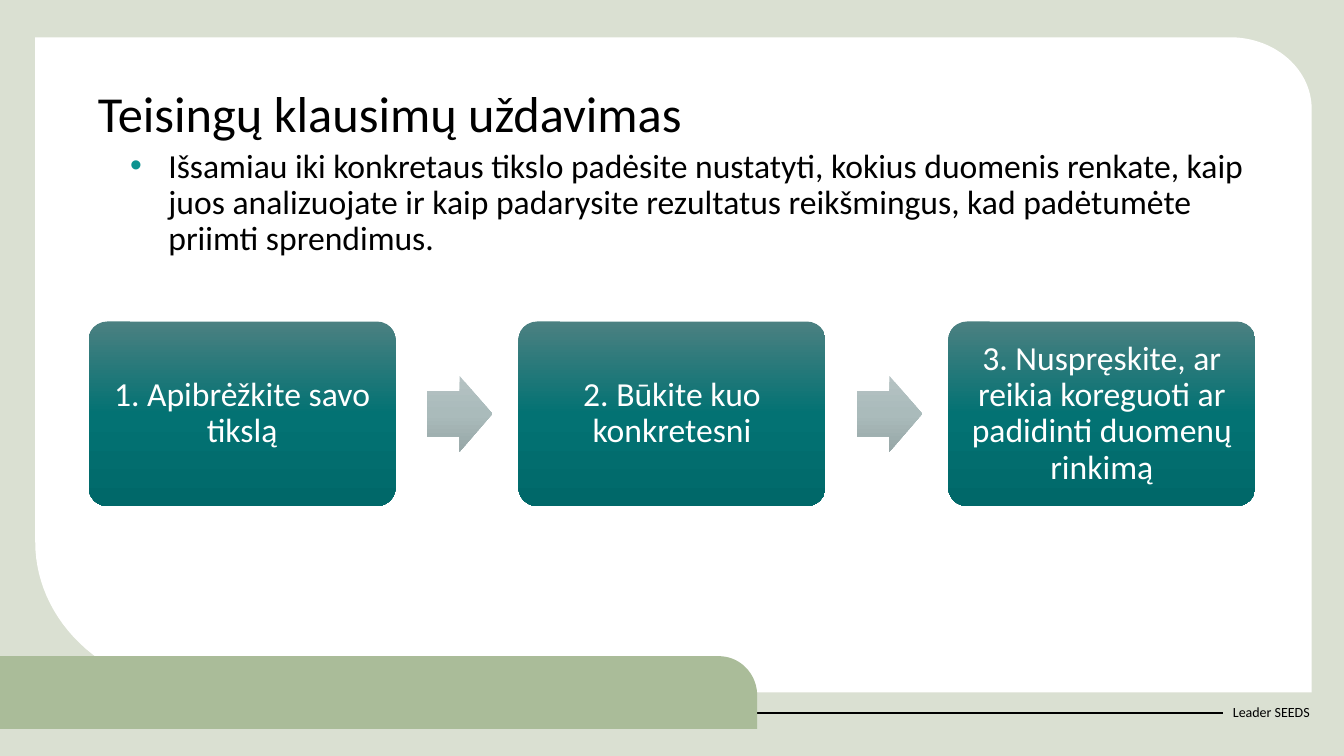
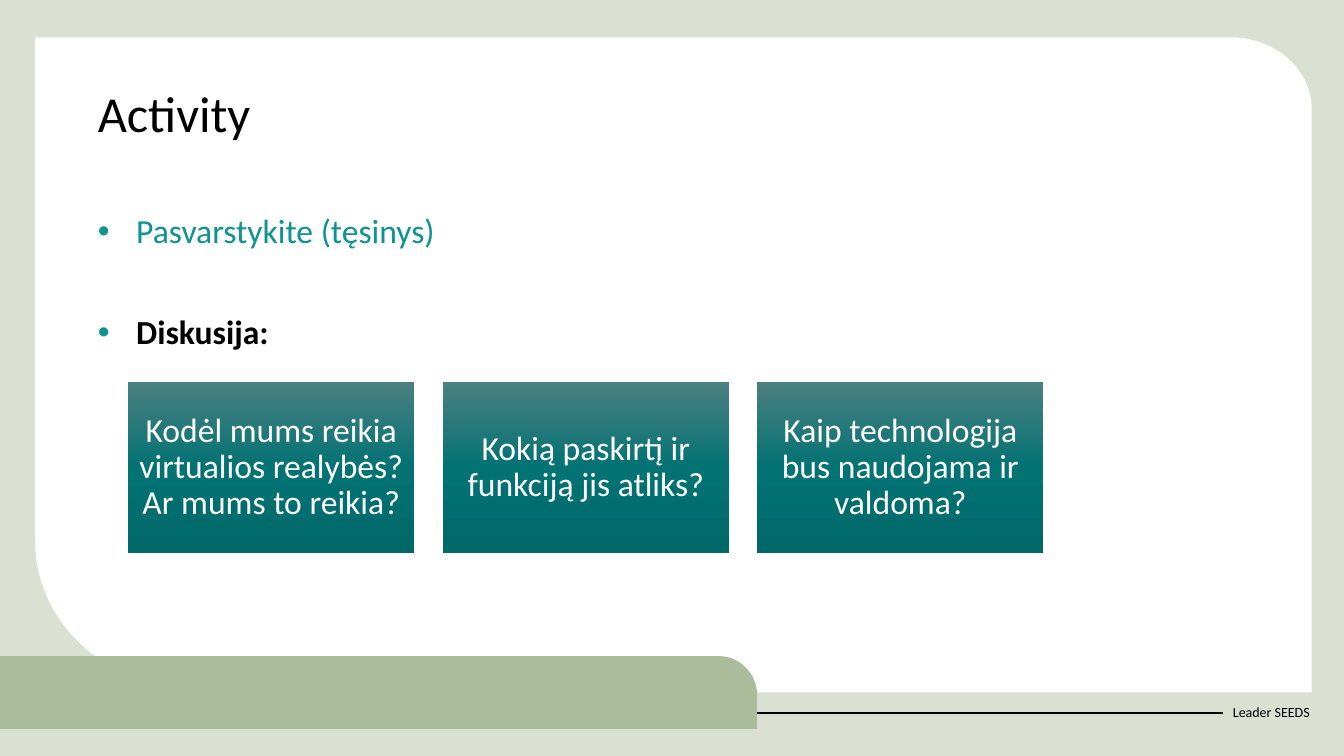
import math
from dataclasses import dataclass

import pptx
import pptx.dml.color
import pptx.enum.shapes
import pptx.enum.text
import pptx.oxml.ns
import pptx.util
from lxml import etree

Inches = pptx.util.Inches
Pt = pptx.util.Pt
RGB = pptx.dml.color.RGBColor.from_string
Shape = pptx.enum.shapes.MSO_SHAPE
Align = pptx.enum.text.PP_ALIGN
Anchor = pptx.enum.text.MSO_ANCHOR
qn = pptx.oxml.ns.qn


@dataclass(frozen=True)
class Theme:
    font: str = "Calibri"
    page: str = "DAE0D2"
    panel: str = "FFFFFF"
    band: str = "AABC99"
    text: str = "000000"
    accent: str = "0D9390"
    on_box: str = "FFFFFF"
    box_gradient: tuple = ("4B8081", "037273", "006869")
    arrow_gradient: tuple = ("B5C2C3", "AABBBB", "97A7A7")
    title_size: int = 36
    body_size: int = 24
    footer_size: int = 10
    line_spacing: float = 0.9


THEME = Theme()


def add_bullet(p, color):
    pPr = p._p.get_or_add_pPr()
    pPr.set("marL", str(Inches(0.38)))
    pPr.set("indent", str(-Inches(0.38)))
    clr = etree.SubElement(pPr, qn("a:buClr"))
    etree.SubElement(clr, qn("a:srgbClr"), val=color)
    etree.SubElement(pPr, qn("a:buFont"), typeface="Arial")
    etree.SubElement(pPr, qn("a:buChar"), char="•")


def write(tf, text, size=THEME.body_size, color=THEME.text, bold=False,
          align=Align.LEFT, before=0, bullet=False):
    """Fill the first paragraph if the frame is empty, otherwise add one."""
    p = tf.add_paragraph() if tf.text else tf.paragraphs[0]
    if bullet:
        add_bullet(p, THEME.accent)
    p.alignment = align
    p.line_spacing = THEME.line_spacing
    p.space_before = Pt(before)
    r = p.add_run()
    r.text = text
    r.font.name = THEME.font
    r.font.size = Pt(size)
    r.font.bold = bold
    r.font.color.rgb = RGB(color)


def place(sp, box):
    sp.left, sp.top, sp.width, sp.height = (Inches(v) for v in box)


def set_frame(tf, anchor, margin=None):
    tf.word_wrap = True
    tf.auto_size = pptx.enum.text.MSO_AUTO_SIZE.NONE
    tf.vertical_anchor = anchor
    if margin is not None:
        tf.margin_left = tf.margin_right = Inches(margin)
        tf.margin_top = tf.margin_bottom = Inches(margin)


def fill_gradient(sp, colors):
    """Spread the colours evenly from top to bottom."""
    sp.fill.gradient()
    sp.fill.gradient_angle = 270
    stops = next(sp.element.spPr.iter(qn("a:gsLst")))
    for gs in list(stops):
        stops.remove(gs)
    for i, color in enumerate(colors):
        pos = round(100000 * i / (len(colors) - 1))
        gs = etree.SubElement(stops, qn("a:gs"), pos=str(pos))
        etree.SubElement(gs, qn("a:srgbClr"), val=color)


def add_gradient_shape(slide, kind, box, colors, adjustments=()):
    sp = slide.shapes.add_shape(kind, *(Inches(v) for v in box))
    for i, value in enumerate(adjustments):
        sp.adjustments[i] = value
    sp.shadow.inherit = False
    sp.line.fill.background()
    fill_gradient(sp, colors)
    return sp


def add_rounded_panel(slide, box, color, top_right=(0, 0), bottom_left=(0, 0)):
    """Draw a rectangle with two elliptical corners, given as (rx, ry)."""
    x, y, w, h = box

    def arc(cx, cy, radii, start):
        angles = [math.radians(start + 3 * i) for i in range(31)]
        return [(cx + radii[0] * math.cos(a), cy + radii[1] * math.sin(a))
                for a in angles]

    points = [(x, y)]
    points += arc(x + w - top_right[0], y + top_right[1], top_right, -90)
    points.append((x + w, y + h))
    points += arc(x + bottom_left[0], y + h - bottom_left[1], bottom_left, 90)
    points = [(Inches(px), Inches(py)) for px, py in points]
    fb = slide.shapes.build_freeform(*points[0])
    fb.add_line_segments(points[1:])
    sp = fb.convert_to_shape()
    sp.shadow.inherit = False
    sp.fill.solid()
    sp.fill.fore_color.rgb = RGB(color)
    sp.line.fill.background()
    return sp


def add_footer(slide, box):
    """Add the footer label and the rule that runs into its left side."""
    label = slide.shapes.add_textbox(*(Inches(v) for v in box))
    set_frame(label.text_frame, Anchor.MIDDLE)
    write(label.text_frame, "Leader SEEDS", size=THEME.footer_size)
    y = Inches(box[1] + box[3] / 2)
    rule = slide.shapes.add_connector(
        pptx.enum.shapes.MSO_CONNECTOR.STRAIGHT, 0, y, Inches(box[0]), y)
    rule.end_connect(label, 1)
    rule.line.color.rgb = RGB(THEME.text)
    rule.line.width = Pt(1.5)
    etree.SubElement(rule.element.spPr, qn("a:effectLst"))
    return [label, rule]


def decorate_layout(layout, slide):
    """Build the shared parts on a slide, then move them behind the layout."""
    for ph in list(layout.placeholders):
        if ph.placeholder_format.idx >= 10:
            layout.shapes.element.remove(ph.element)
    layout.background.fill.solid()
    layout.background.fill.fore_color.rgb = RGB(THEME.page)
    parts = [add_rounded_panel(slide, (0.35, 0.37, 12.66, 6.5), THEME.panel,
                               top_right=(0.81, 0.71),
                               bottom_left=(1.7, 1.49))]
    parts += add_footer(slide, (12.13, 6.87, 1.01, 0.4))
    parts.append(add_rounded_panel(slide, (0, 6.51, 7.51, 0.72), THEME.band,
                                   top_right=(0.38, 0.39)))
    for i, sp in enumerate(parts):
        layout.shapes.element.insert(2 + i, sp.element)
    place(layout.placeholders[0], (0.87, 0.83, 11.59, 0.88))
    place(layout.placeholders[1], (0.87, 2.08, 11.59, 4.37))


def fill_title(slide, text):
    tf = slide.shapes.title.text_frame
    set_frame(tf, Anchor.TOP)
    write(tf, text, size=THEME.title_size)


def body_frame(slide, box):
    body = slide.placeholders[1]
    place(body, box)
    set_frame(body.text_frame, Anchor.TOP)
    return body.text_frame


def add_box_row(slide, box, labels, gap, kind, adjustments=(), margin=0.1,
                arrow=None):
    """Share the box among equal cells; arrow is (offset, width, height)."""
    x, y, w, h = box
    cell = (w - gap * (len(labels) - 1)) / len(labels)
    for i, label in enumerate(labels):
        left = x + i * (cell + gap)
        if arrow and i:
            offset, aw, ah = arrow
            add_gradient_shape(
                slide, Shape.RIGHT_ARROW,
                (left - gap + offset, y + (h - ah) / 2, aw, ah),
                THEME.arrow_gradient, (0.6, 0.5))
        sp = add_gradient_shape(slide, kind, (left, y, cell, h),
                                THEME.box_gradient, adjustments)
        set_frame(sp.text_frame, Anchor.MIDDLE, margin)
        write(sp.text_frame, label, color=THEME.on_box, align=Align.CENTER)


def build_questions(slide):
    fill_title(slide, "Teisingų klausimų uždavimas")
    tf = body_frame(slide, (1.19, 1.43, 11.59, 4.37))
    write(tf, "Išsamiau iki konkretaus tikslo padėsite nustatyti, kokius "
              "duomenis renkate, kaip juos analizuojate ir kaip padarysite "
              "rezultatus reikšmingus, kad padėtumėte priimti sprendimus.",
          bullet=True)
    steps = ["1. Apibrėžkite savo tikslą",
             "2. Būkite kuo konkretesni",
             "3. Nuspręskite, ar reikia koreguoti ar padidinti duomenų "
             "rinkimą"]
    add_box_row(slide, (0.88, 3.19, 11.57, 1.83), steps, 1.22,
                Shape.ROUNDED_RECTANGLE, (0.1,), margin=0.15,
                arrow=(0.31, 0.65, 0.75))


def build_activity(slide):
    fill_title(slide, "Activity")
    tf = body_frame(slide, (0.87, 2.08, 11.59, 4.37))
    write(tf, "Pasvarstykite (tęsinys)", color=THEME.accent, bullet=True)
    write(tf, "Diskusija:", bold=True, before=46, bullet=True)
    questions = ["Kodėl mums reikia virtualios realybės? Ar mums to reikia?",
                 "Kokią paskirtį ir funkciją jis atliks?",
                 "Kaip technologija bus naudojama ir valdoma?"]
    add_box_row(slide, (1.27, 3.79, 9.08, 1.7), questions, 0.28,
                Shape.RECTANGLE)


def main():
    prs = pptx.Presentation()
    prs.slide_width = Inches(13.33)
    prs.slide_height = Inches(7.5)
    layout = prs.slide_layouts[1]
    slides = [prs.slides.add_slide(layout) for _ in range(2)]
    decorate_layout(layout, slides[0])
    for build, slide in zip((build_questions, build_activity), slides):
        build(slide)
    prs.save("out.pptx")


if __name__ == "__main__":
    main()
